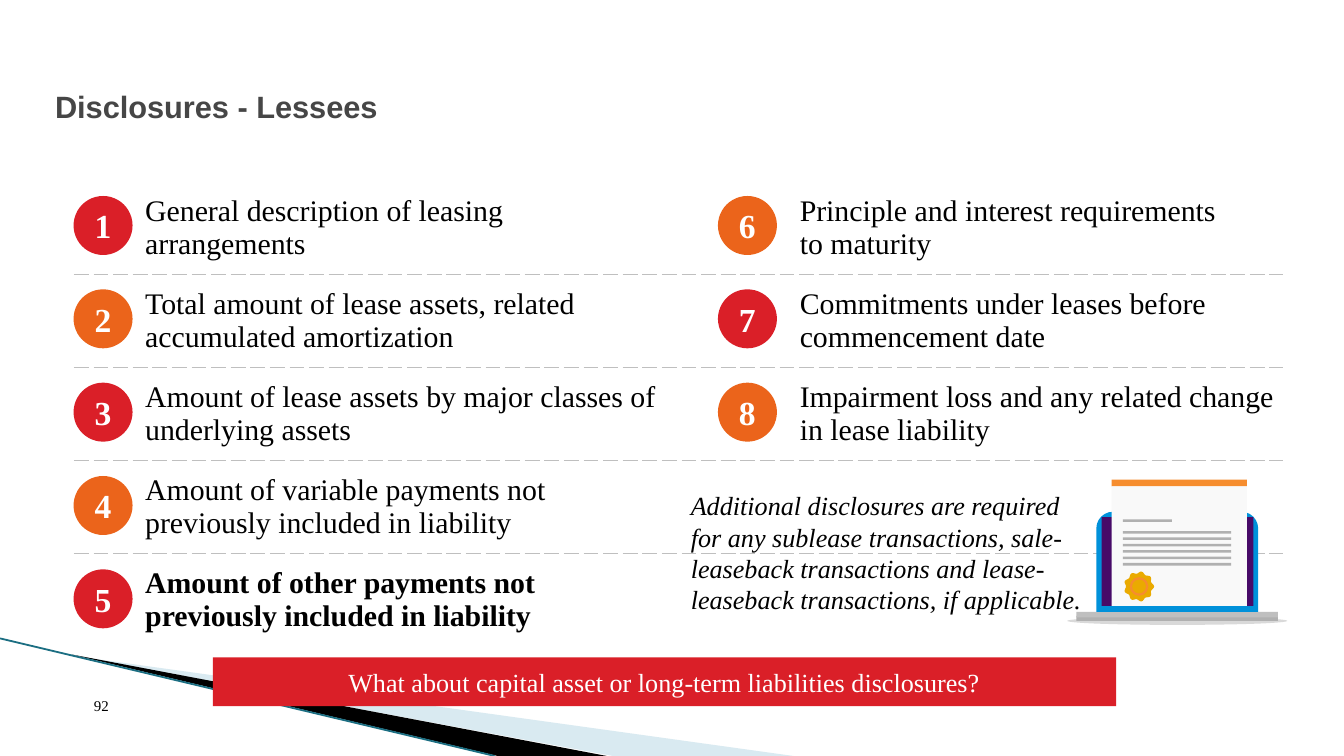
"""Build the lessee disclosures slide."""
from copy import deepcopy
from math import cos, pi, sin

from lxml import etree
from pptx import Presentation
from pptx.dml.color import RGBColor
from pptx.enum.shapes import MSO_CONNECTOR, MSO_SHAPE
from pptx.enum.text import MSO_ANCHOR, PP_ALIGN
from pptx.oxml.ns import qn
from pptx.util import Pt

RECTANGLE, OVAL = MSO_SHAPE.RECTANGLE, MSO_SHAPE.OVAL
ROUND_TOP = MSO_SHAPE.ROUND_2_SAME_RECTANGLE
LEFT, CENTER = PP_ALIGN.LEFT, PP_ALIGN.CENTER
TOP, MIDDLE, BOTTOM = MSO_ANCHOR.TOP, MSO_ANCHOR.MIDDLE, MSO_ANCHOR.BOTTOM
SERIF, SANS = "Times New Roman", "Arial"
RED, ORANGE, GREY, DASH = "DA1F28", "EB641B", "B0B0B0", "BFBFBF"
NO_GRID_STYLE = "{2D5ABB26-0587-4C30-8999-92F81FD0307C}"

TITLE = "Disclosures - Lessees"
LEFT_ITEMS = [
    "General description of leasing arrangements",
    "Total amount of lease assets, related accumulated amortization",
    "Amount of lease assets by major classes of underlying assets",
    "Amount of variable payments not previously included in liability",
    "Amount of other payments not previously included in liability",
]
RIGHT_ITEMS = [
    "Principle and interest requirements \vto maturity",
    "Commitments under leases before commencement date",
    "Impairment loss and any related change in lease liability",
]
NOTE = ("Additional disclosures are required for any sublease transactions, "
        "sale-leaseback transactions and lease-leaseback transactions, if applicable.")
QUESTION = "What about capital asset or long-term liabilities disclosures?"
PAGE_NUMBER = "92"

WEDGES = [
    ([(39.6, 351.4), (425, 405), (328.3, 405)], "A0CBDC", 40),
    ([(38.2, 350.6), (325, 405), (266.5, 405)], "000000", 100),
]
LAPTOP = [
    (OVAL, 571.7, 330.5, 118, 4.3, "000000", 15),
    (RECTANGLE, 576.6, 330, 108, 2.6, GREY, 100),
    (RECTANGLE, 576.6, 327.8, 108, 3, DASH, 100),
    (ROUND_TOP, 587.3, 274.2, 86.7, 53.7, "0091DA", 100),
    (RECTANGLE, 590.2, 277, 81.2, 47.6, "470A68", 100),
    (RECTANGLE, 595.6, 257, 72.4, 3.6, "F68D2E", 100),
    (RECTANGLE, 595.6, 260.6, 72.4, 64, "F9F9F9", 100),
    (RECTANGLE, 601.6, 278.2, 26.2, 1.4, GREY, 100),
]
TEXT_LINES, TEXT_LINE_TOP, TEXT_LINE_STEP = 6, 284.5, 3.42
BADGE_CENTER, BADGE_LOBES = (610.2, 314.2), 9

TABLE_LEFT, TABLE_TOP, ROW_HEIGHT = 39.6, 97.3, 49.8
COLUMNS = [322.6, 17.3, 308.1]
INDENTS = [38.2, 5, 49]
NUMBER_LEFTS, NUMBER_TOP, NUMBER_STEP, NUMBER_SIZE = (39.4, 384.6), 105, 50, 31.6


def color(value):
    return RGBColor.from_string(value)


def write(frame, text, size=16, font=SERIF, ink="000000", bold=False,
          italic=False, align=LEFT, anchor=MIDDLE, inset=None):
    frame.word_wrap = True
    frame.vertical_anchor = anchor
    if inset is not None:
        frame.margin_left = frame.margin_right = Pt(inset)
        frame.margin_top = frame.margin_bottom = Pt(inset)
    para = frame.paragraphs[0]
    para.text, para.alignment = text, align
    for span in para.runs:
        span.font.name, span.font.size = font, Pt(size)
        span.font.bold, span.font.italic = bold, italic
        span.font.color.rgb = color(ink)
    for line_break in para._p.findall(qn("a:br")):
        line_break.append(deepcopy(para.runs[0]._r.rPr))


def paint(shape, fill, opacity=100):
    shape.shadow.inherit = False
    shape.fill.solid()
    shape.fill.fore_color.rgb = color(fill)
    shape.line.fill.background()
    if opacity < 100:
        tint = shape._element.spPr.find(".//" + qn("a:srgbClr"))
        etree.SubElement(tint, qn("a:alpha"), val=str(opacity * 1000))


def add_block(page, kind, left, top, width, height, fill, opacity=100):
    block = page.shapes.add_shape(kind, Pt(left), Pt(top), Pt(width), Pt(height))
    paint(block, fill, opacity)
    return block


def add_outline(page, points, fill, opacity=100):
    corners = [(Pt(x), Pt(y)) for x, y in points]
    builder = page.shapes.build_freeform(*corners[0])
    builder.add_line_segments(corners[1:], close=True)
    paint(builder.convert_to_shape(), fill, opacity)


def add_text(page, left, top, width, height, text, **style):
    box = page.shapes.add_textbox(Pt(left), Pt(top), Pt(width), Pt(height))
    write(box.text_frame, text, **style)


def add_border(cell, side):
    line = etree.Element(qn("a:" + side), w=str(Pt(1)))
    fill = etree.SubElement(line, qn("a:solidFill"))
    etree.SubElement(fill, qn("a:srgbClr"), val=DASH)
    etree.SubElement(line, qn("a:prstDash"), val="sysDash")
    cell._tc.get_or_add_tcPr().insert(0, line)


def add_disclosures(page):
    rows = len(LEFT_ITEMS)
    table = page.shapes.add_table(rows, len(COLUMNS), Pt(TABLE_LEFT), Pt(TABLE_TOP),
                                  Pt(sum(COLUMNS)), Pt(rows * ROW_HEIGHT)).table
    table.first_row = table.horz_banding = False
    table._tbl.tblPr.find(qn("a:tableStyleId")).text = NO_GRID_STYLE
    for column, width in zip(table.columns, COLUMNS):
        column.width = Pt(width)
    ruled = [rows - 1, len(RIGHT_ITEMS), len(RIGHT_ITEMS)]
    for i, row in enumerate(table.rows):
        row.height = Pt(ROW_HEIGHT)
        right = RIGHT_ITEMS[i] if i < len(RIGHT_ITEMS) else ""
        for j, text in enumerate((LEFT_ITEMS[i], "", right)):
            cell = table.cell(i, j)
            cell.fill.background()
            cell.vertical_anchor = MIDDLE
            cell.margin_left, cell.margin_right = Pt(INDENTS[j]), Pt(5)
            cell.margin_top = cell.margin_bottom = Pt(2.9)
            if text:
                write(cell.text_frame, text, bold=i == rows - 1, anchor=None)
            if i < ruled[j]:
                add_border(cell, "lnB")
            if 0 < i <= ruled[j]:
                add_border(cell, "lnT")


def add_numbers(page):
    places = [(left, i) for left, items in zip(NUMBER_LEFTS, (LEFT_ITEMS, RIGHT_ITEMS))
              for i in range(len(items))]
    for number, (left, i) in enumerate(places, 1):
        circle = add_block(page, OVAL, left, NUMBER_TOP + i * NUMBER_STEP,
                           NUMBER_SIZE, NUMBER_SIZE, RED if number % 2 else ORANGE)
        write(circle.text_frame, str(number), size=18, ink="FFFFFF", bold=True,
              align=CENTER, inset=0)


def add_laptop(page):
    for part in LAPTOP:
        add_block(page, *part)
    for i in range(TEXT_LINES):
        add_block(page, RECTANGLE, 601.6, TEXT_LINE_TOP + i * TEXT_LINE_STEP,
                  58, 1.4, GREY)
    x, y = BADGE_CENTER
    angles = [2 * pi * i / 72 for i in range(72)]
    radii = [7.5 + 0.6 * cos(BADGE_LOBES * angle) for angle in angles]
    add_outline(page, [(x + r * cos(a), y + r * sin(a)) for r, a in zip(radii, angles)],
                "EAAA00")
    for radius, fill in ((5, "F68D2E"), (3.7, "EAAA00")):
        add_block(page, OVAL, x - radius, y - radius, 2 * radius, 2 * radius, fill)


def main():
    deck = Presentation()
    deck.slide_width, deck.slide_height = Pt(720), Pt(405)
    page = deck.slides.add_slide(deck.slide_layouts[6])
    for wedge in WEDGES:
        add_outline(page, *wedge)
    edge = page.shapes.add_connector(MSO_CONNECTOR.STRAIGHT, Pt(0), Pt(342), Pt(265), Pt(405))
    edge.line.color.rgb, edge.line.width = color("1B6E82"), Pt(0.95)
    etree.SubElement(edge._element.spPr, qn("a:effectLst"))
    add_text(page, 29.5, 20.2, 612, 46.8, TITLE, size=16.5, font=SANS,
             ink="464646", bold=True, anchor=BOTTOM, inset=0)
    add_disclosures(page)
    add_numbers(page)
    add_text(page, 370.1, 262.1, 211.7, 67.7, NOTE, size=14, italic=True, inset=0)
    banner = add_block(page, RECTANGLE, 114, 352.2, 484, 26.2, RED)
    write(banner.text_frame, QUESTION, size=14, ink="FFFFFF", align=CENTER, inset=2.9)
    add_laptop(page)
    add_text(page, 43.2, 369.4, 24, 21.6, PAGE_NUMBER, size=8, anchor=TOP)
    deck.save("out.pptx")


if __name__ == "__main__":
    main()
